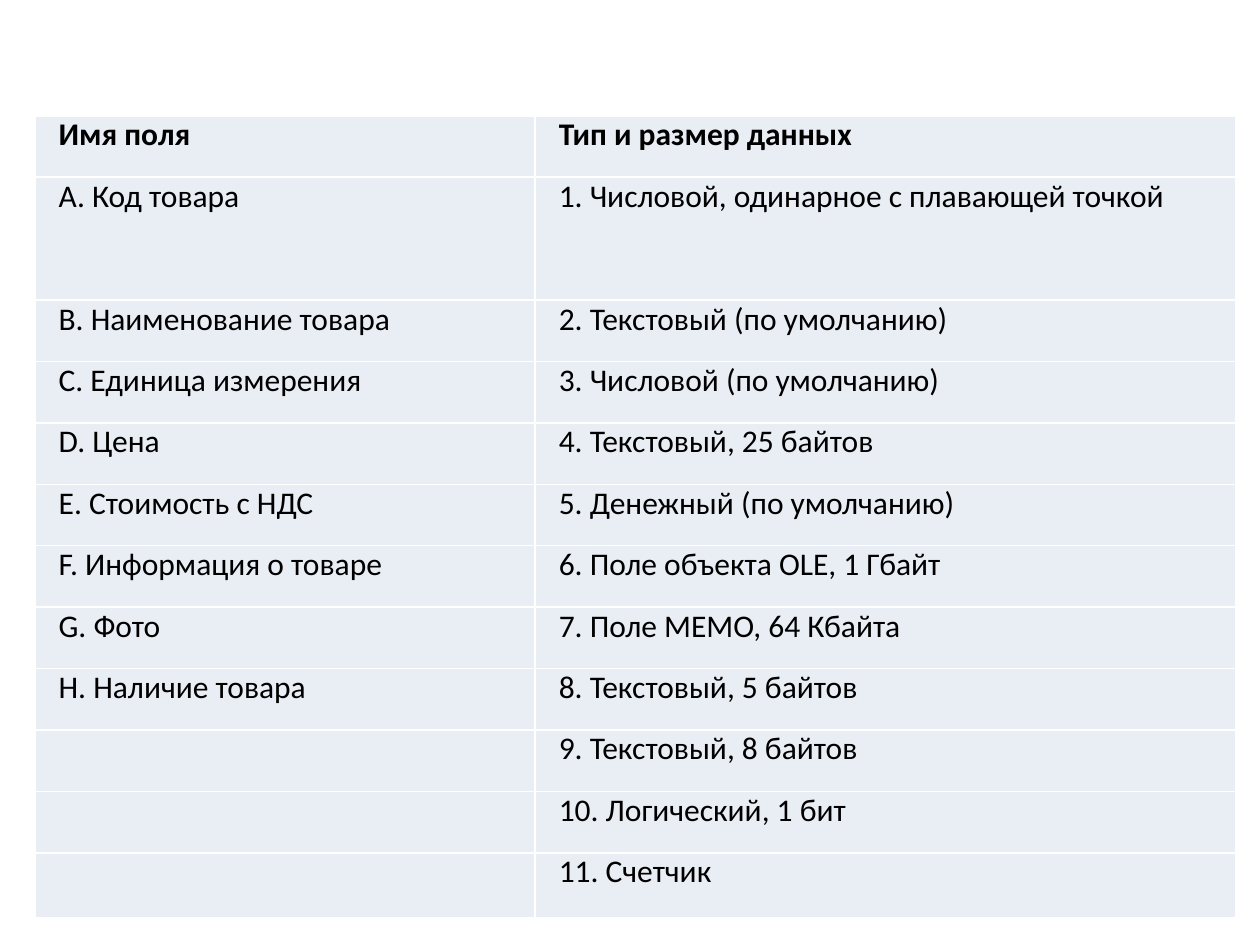
from dataclasses import dataclass
from itertools import zip_longest

import lxml.etree
import pptx
import pptx.dml.color
import pptx.oxml.ns
import pptx.util

Pt = pptx.util.Pt


@dataclass(frozen=True)
class Theme:
    font: str = "Calibri"
    size: float = 18
    ink: str = "000000"
    cell: str = "E9EDF4"
    border: str = "FFFFFF"


theme = Theme()


def write_text(cell, text, *, bold=False, size=theme.size, color=theme.ink, indent=13.5):
    para = cell.text_frame.paragraphs[0]
    properties = para._p.get_or_add_pPr()
    properties.set("marL", "0")
    properties.set("indent", str(Pt(indent)))
    span = para.add_run()
    span.text = text
    span.font.name = theme.font
    span.font.size = Pt(size)
    span.font.bold = bold
    span.font.color.rgb = pptx.dml.color.RGBColor.from_string(color)


def style_cell(cell):
    """Give the cell no margins, four thin borders and a flat fill."""
    cell.margin_left = cell.margin_right = cell.margin_top = cell.margin_bottom = 0
    properties = cell._tc.get_or_add_tcPr()
    qn = pptx.oxml.ns.qn
    for side in ("a:lnL", "a:lnR", "a:lnT", "a:lnB"):
        line = lxml.etree.SubElement(properties, qn(side), w=str(Pt(1)))
        fill = lxml.etree.SubElement(line, qn("a:solidFill"))
        lxml.etree.SubElement(fill, qn("a:srgbClr"), val=theme.border)
    cell.fill.solid()
    cell.fill.fore_color.rgb = pptx.dml.color.RGBColor.from_string(theme.cell)


fields = [
    "Имя поля",
    "А. Код товара",
    "В. Наименование товара",
    "С. Единица измерения",
    "D. Цена",
    "Е. Стоимость с НДС",
    "F. Информация о товаре",
    "G. Фото",
    "Н. Наличие товара",
]
data_types = [
    "Тип и размер данных",
    "1. Числовой, одинарное с плавающей точкой",
    "2. Текстовый (по умолчанию)",
    "3. Числовой (по умолчанию)",
    "4. Текстовый, 25 байтов",
    "5. Денежный (по умолчанию)",
    "6. Поле объекта OLE, 1 Гбайт",
    "7. Поле MEMO, 64 Кбайта",
    "8. Текстовый, 5 байтов",
    "9. Текстовый, 8 байтов",
    "10. Логический, 1 бит",
    "11. Счетчик",
]
column_widths = [285.8, 400.3]
row_height = 35.1
row_heights = [row_height, 2 * row_height] + [row_height] * 9 + [37.4]

deck = pptx.Presentation()
deck.slide_width, deck.slide_height = Pt(720), Pt(540)
page = deck.slides.add_slide(deck.slide_layouts[6])

table = page.shapes.add_table(
    len(data_types), len(column_widths), Pt(20), Pt(66.2),
    Pt(sum(column_widths)), Pt(sum(row_heights)),
).table
table.first_row = table.horz_banding = False
for column, width in zip(table.columns, column_widths):
    column.width = Pt(width)
for row, height in zip(table.rows, row_heights):
    row.height = Pt(height)

for row_index, texts in enumerate(zip_longest(fields, data_types)):
    for column_index, text in enumerate(texts):
        cell = table.cell(row_index, column_index)
        style_cell(cell)
        if text:
            write_text(cell, text, bold=row_index == 0)

deck.save("out.pptx")
